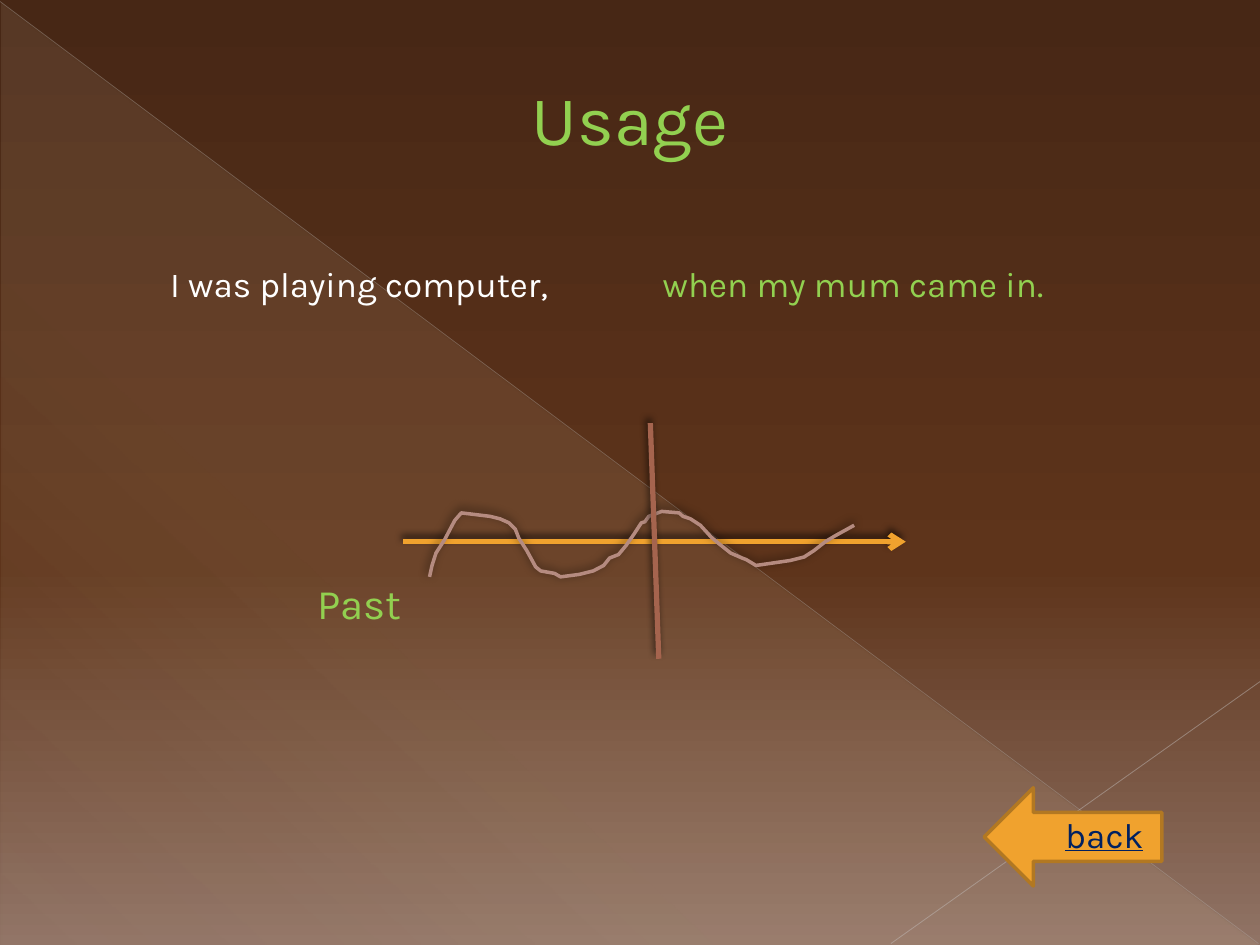
"""Build a grammar slide with a timeline of the past continuous."""
from lxml.etree import SubElement
from pptx import Presentation
from pptx.dml.color import RGBColor
from pptx.enum.shapes import MSO_CONNECTOR, MSO_SHAPE
from pptx.enum.text import MSO_ANCHOR, MSO_AUTO_SIZE, PP_ALIGN
from pptx.oxml.ns import qn
from pptx.util import Cm, Pt

GREEN = RGBColor(0x92, 0xD0, 0x50)
WHITE = RGBColor(0xFF, 0xFF, 0xFF)
NAVY = RGBColor(0x00, 0x20, 0x60)
AMBER = RGBColor(0xF0, 0xA2, 0x2E)
OCHRE = RGBColor(0xB2, 0x78, 0x22)
RUST = RGBColor(0xA5, 0x64, 0x4E)
ROSE = RGBColor(0xB5, 0x8B, 0x80)
PALE = RGBColor(0xBC, 0xB7, 0xB4)
MIST = RGBColor(0xC4, 0xBF, 0xBD)
CREAM = RGBColor(0xFB, 0xEE, 0xC9)
BLACK = RGBColor(0x00, 0x00, 0x00)
DARK = RGBColor(0x47, 0x27, 0x15)
BROWN = RGBColor(0x5E, 0x34, 0x1B)
TAUPE = RGBColor(0x90, 0x73, 0x65)

WIDE, HIGH = 25.4, 19.05
BACK = [(0, DARK, 100), (60, BROWN, 100), (100, TAUPE, 100)]
SHEEN = [(0, CREAM, 10), (70, CREAM, 8), (100, CREAM, 1)]

TITLE = ("Usage", (0, 1.4, WIDE, 1.96), {"size": Pt(40)}, GREEN)
NOTES = [
    ("I was playing computer,", (3.18, 5.16, 8.94, 1.12), {"size": Pt(20)}, WHITE),
    ("when my mum came in.", (13.11, 5.16, 8.53, 1.12), {"size": Pt(20)}, GREEN),
    ("Past", (6.15, 11.51, 2.39, 1.27), {"size": Pt(24)}, GREEN),
]
LINK = ("back", (21.23, 16.28, 2.77, 1.12), {"size": Pt(20), "underline": True}, NAVY)
ARROW = (19.84, 15.88, 3.58, 1.98)

RAYS = [
    ((0, 0.03, 25.37, 19.02), PALE, 0.39, 35),
    ((WIDE, 13.74, 17.96, 19.02), MIST, 0.47, 45),
]
AXIS = (8.13, 10.92, 18.26, 10.92)
EVENT = (13.11, 8.53, 13.28, 13.28)
DEEP = (60, 4, 3)
SOFT = (50, 5, 2)
WAVE = [
    (866, 1163), (871, 1140), (879, 1115), (897, 1087), (909, 1064), (917, 1049),
    (930, 1034), (988, 1041), (1008, 1046), (1026, 1054), (1039, 1067), (1046, 1085),
    (1062, 1110), (1080, 1143), (1090, 1151), (1118, 1156), (1130, 1163), (1168, 1158),
    (1196, 1151), (1217, 1140), (1229, 1125), (1247, 1118), (1262, 1100), (1278, 1077),
    (1293, 1054), (1300, 1052), (1308, 1041), (1334, 1031), (1369, 1034), (1377, 1041),
    (1392, 1046), (1412, 1059), (1433, 1082), (1448, 1095), (1473, 1115), (1496, 1125),
    (1504, 1128), (1524, 1140), (1593, 1130), (1621, 1123), (1641, 1110), (1664, 1092),
    (1684, 1080), (1722, 1059),
]


def node(root, tag, **vals):
    return SubElement(root, qn("a:" + tag), {k: str(v) for k, v in vals.items()})


def tint(root, color, alpha):
    node(node(root, "srgbClr", val=color), "alpha", val=alpha * 1000)


def blend(fill, stops, angle):
    fill.gradient()
    grad = fill._fill._gradFill
    for old in list(grad):
        grad.remove(old)
    group = node(grad, "gsLst")
    for place, color, alpha in stops:
        tint(node(group, "gs", pos=place * 1000), color, alpha)
    node(grad, "lin", ang=angle * 60000, scaled=0)


def stroke(shape, color, width):
    shape.line.color.rgb = color
    shape.line.width = Pt(width)


def shade(shape, cast=None):
    props = shape._element.spPr
    for old in props.findall(qn("a:effectLst")):
        props.remove(old)
    group = node(props, "effectLst")
    if cast:
        alpha, blur, dist = cast
        drop = node(group, "outerShdw", blurRad=Pt(blur), dist=Pt(dist),
                    dir=245 * 60000, algn="tl", rotWithShape=0)
        tint(drop, BLACK, alpha)


def rule(shapes, ends, color, width, cast=None):
    line = shapes.add_connector(MSO_CONNECTOR.STRAIGHT, *map(Cm, ends))
    stroke(line, color, width)
    shade(line, cast)
    return line


def write(box, text, spot, style, color, align=PP_ALIGN.LEFT):
    for name, size in zip(("left", "top", "width", "height"), spot):
        setattr(box, name, Cm(size))
    frame = box.text_frame
    form = {"word_wrap": True, "auto_size": MSO_AUTO_SIZE.SHAPE_TO_FIT_TEXT,
            "vertical_anchor": MSO_ANCHOR.TOP}
    for name, value in form.items():
        setattr(frame, name, value)
    para = frame.paragraphs[0]
    para.alignment = align
    run = para.add_run()
    run.text = text
    for name, value in {"name": "Karla", **style}.items():
        setattr(run.font, name, value)
    run.font.color.rgb = color


def label(shapes, note):
    write(shapes.add_textbox(*map(Cm, note[1])), *note)


def decor(slide):
    blend(slide.background.fill, BACK, 90)
    shapes = slide.shapes
    sheet = shapes.add_shape(MSO_SHAPE.RIGHT_TRIANGLE, Cm(0.03), Cm(0.05),
                             Cm(25.35), Cm(19))
    blend(sheet.fill, SHEEN, 133)
    sheet.line.fill.background()
    sheet.shadow.inherit = False
    for ends, color, width, alpha in RAYS:
        ray = rule(shapes, ends, color, width)
        clr = ray.line._ln.find(".//" + qn("a:srgbClr"))
        node(clr, "alpha", val=alpha * 1000)


def chart(shapes):
    axis = rule(shapes, AXIS, AMBER, 3, DEEP)
    node(axis.line._ln, "tailEnd", type="arrow")
    path = shapes.build_freeform(*WAVE[0], scale=Cm(0.01))
    path.add_line_segments(WAVE[1:], close=False)
    wave = path.convert_to_shape()
    wave.fill.background()
    stroke(wave, ROSE, 2)
    shade(wave, SOFT)
    rule(shapes, EVENT, RUST, 3, DEEP)


def main():
    deck = Presentation()
    deck.slide_width, deck.slide_height = Cm(WIDE), Cm(HIGH)
    slide = deck.slides.add_slide(deck.slide_layouts[5])
    shapes = slide.shapes
    decor(slide)
    title = shapes.title
    write(title, *TITLE, align=PP_ALIGN.CENTER)
    title._element.getparent().append(title._element)
    chart(shapes)
    for note in NOTES:
        label(shapes, note)
    arrow = shapes.add_shape(MSO_SHAPE.RIGHT_ARROW, *map(Cm, ARROW))
    arrow.rotation = 180
    arrow.fill.solid()
    arrow.fill.fore_color.rgb = AMBER
    stroke(arrow, OCHRE, 2)
    arrow.shadow.inherit = False
    label(shapes, LINK)
    deck.save("out.pptx")


if __name__ == "__main__":
    main()
